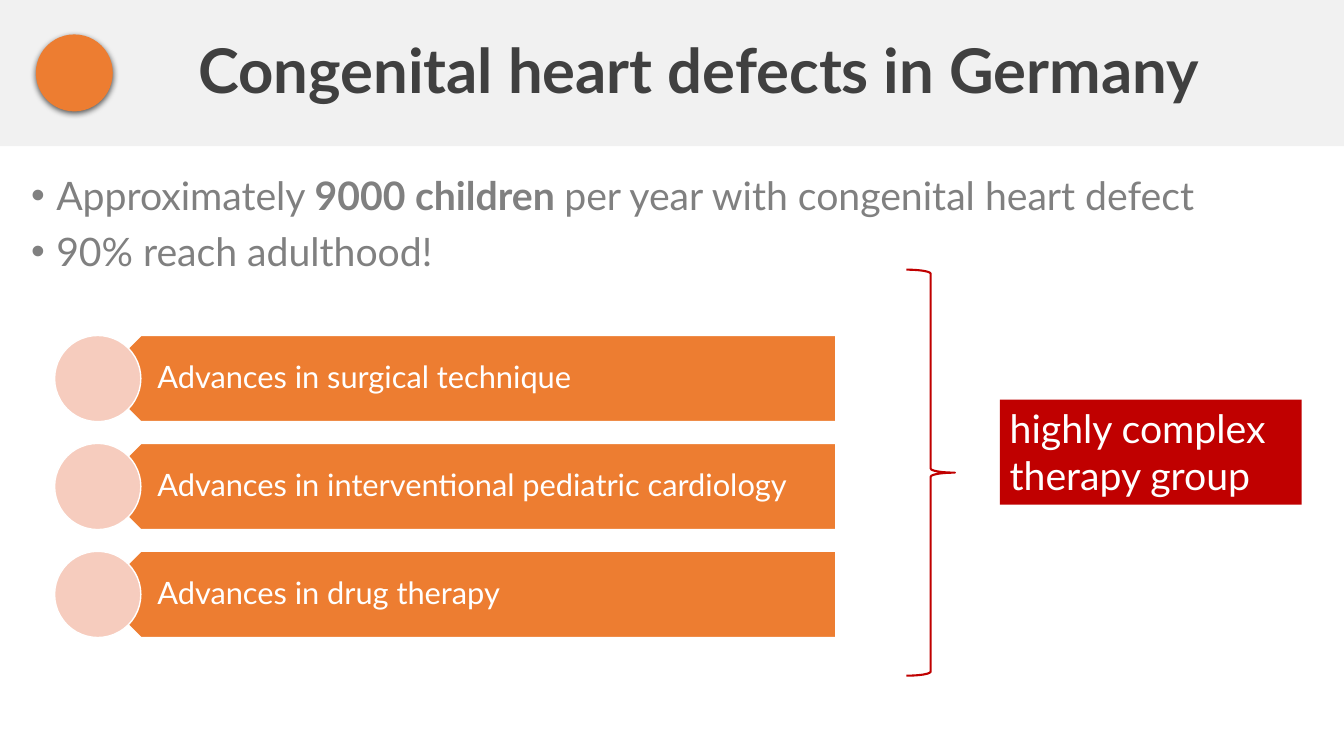
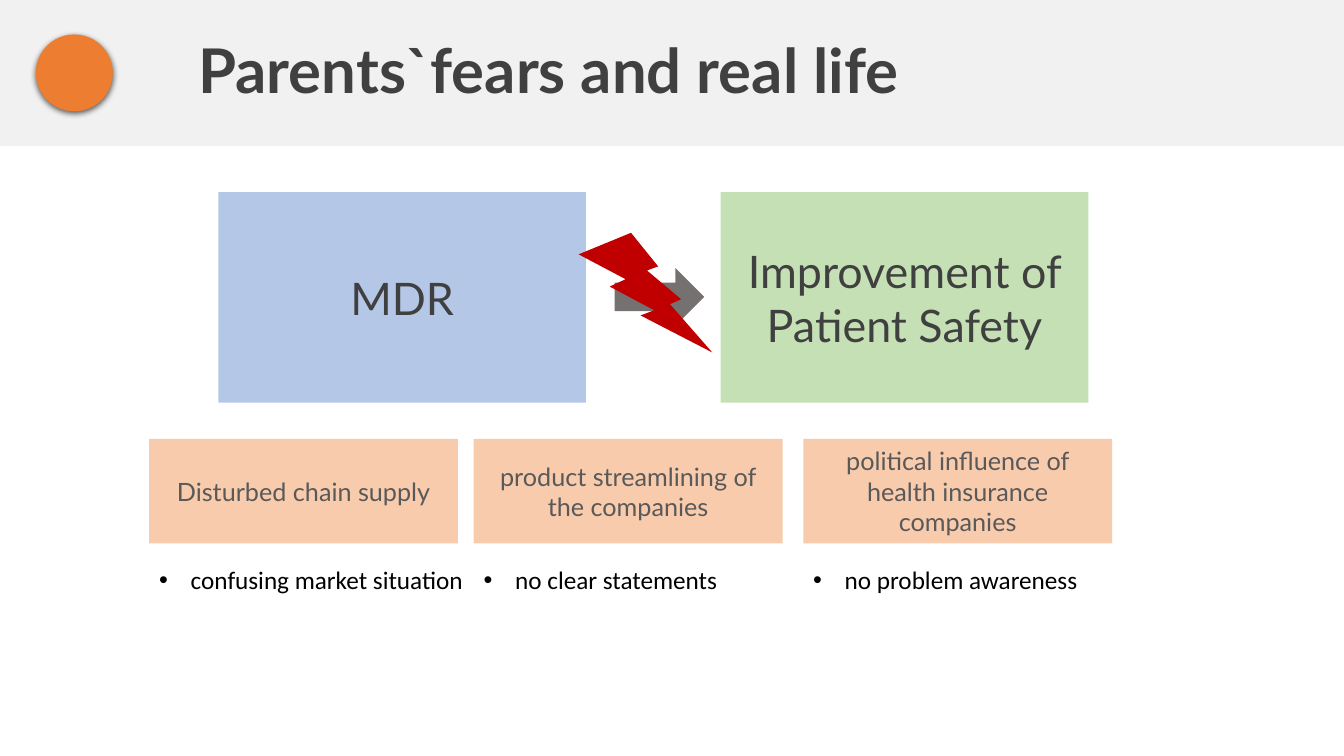
from typing import NamedTuple

from lxml.etree import SubElement
from pptx import Presentation
from pptx.dml.color import RGBColor
from pptx.enum.shapes import MSO_SHAPE as Preset
from pptx.enum.text import MSO_ANCHOR as Anchor, PP_ALIGN as Align
from pptx.oxml.ns import qn
from pptx.util import Pt

# Shared look
SLIDE_W, SLIDE_H = 960, 540
BAND_H = 104.4
FONT, NOTE_FONT = "Lato", "Calibri"
ORANGE, RED, WHITE = "ED7D31", "C00000", "FFFFFF"
BAND, DARK, GREY = "F1F1F1", "404040", "808080"
PINK, PEACH, BLUE, GREEN = "F6CCBE", "F8CBAD", "B4C7E7", "C5E0B4"
ARROW, CAUSE_TEXT, BLACK = "767171", "595959", "000000"


class Box(NamedTuple):
    left: float
    top: float
    width: float
    height: float


class Style(NamedTuple):
    size: float
    color: str
    font: str = FONT
    bold: bool = False
    align: Align = Align.LEFT
    anchor: Anchor = Anchor.MIDDLE
    line_spacing: float = 1.0
    space_before: float = 0
    bullet_indent: float = 0
    insets: tuple = (7.2, 3.6, 7.2, 3.6)


class Cause(NamedTuple):
    left: float
    label: str
    note: str


TITLE = Style(44, DARK, bold=True, line_spacing=0.9)
BODY = Style(28, GREY, anchor=Anchor.TOP, line_spacing=0.9,
             space_before=10, bullet_indent=18)
ADVANCE = Style(22, WHITE, line_spacing=0.9, insets=(27.4, 6.5, 12.2, 6.5))
RESULT = Style(28, WHITE, anchor=Anchor.TOP)
GOAL = Style(32, DARK, align=Align.CENTER)
CAUSE = Style(18, CAUSE_TEXT, align=Align.CENTER)
NOTE = Style(18, BLACK, NOTE_FONT, anchor=Anchor.TOP, bullet_indent=22.5)

# Slide content; a run is (text, bold)
FACTS = [
    [("Approximately ", False), ("9000 children ", True),
     ("per year with congenital heart defect", False)],
    [("90% reach adulthood!", False)],
]
ADVANCES = [
    "Advances in surgical technique",
    "Advances in interventional pediatric cardiology",
    "Advances in drug therapy",
]
GOALS = [(156, "MDR", BLUE), (514.8, "Improvement of Patient Safety", GREEN)]
CAUSES = [
    Cause(106.6, "Disturbed chain supply", "confusing market situation"),
    Cause(338.4, "product streamlining of the companies", "no clear statements"),
    Cause(573.8, "political influence of health insurance companies",
          "no problem awareness"),
]


def rgb(color: str) -> RGBColor:
    return RGBColor.from_string(color)


def set_all(target, values: dict) -> None:
    for name, value in values.items():
        setattr(target, name, value)


def add_bullet(paragraph, indent: float) -> None:
    props = paragraph._p.get_or_add_pPr()
    props.set("marL", str(Pt(indent)))
    props.set("indent", str(-Pt(indent)))
    SubElement(props, qn("a:buFont"), typeface="Arial")
    SubElement(props, qn("a:buChar"), char="•")


def write(shape, paragraphs: list, style: Style) -> None:
    frame = shape.text_frame
    left, top, right, bottom = map(Pt, style.insets)
    set_all(frame, {
        "word_wrap": True, "vertical_anchor": style.anchor,
        "margin_left": left, "margin_top": top,
        "margin_right": right, "margin_bottom": bottom,
    })
    for index, runs in enumerate(paragraphs):
        paragraph = frame.add_paragraph() if index else frame.paragraphs[0]
        set_all(paragraph, {
            "alignment": style.align, "line_spacing": style.line_spacing,
            "space_before": Pt(style.space_before),
        })
        if style.bullet_indent:
            add_bullet(paragraph, style.bullet_indent)
        for text, bold in runs:
            run = paragraph.add_run()
            run.text = text
            set_all(run.font, {"name": style.font, "size": Pt(style.size),
                               "bold": bold or style.bold})
            run.font.color.rgb = rgb(style.color)


def add_text(slide, box: Box, paragraphs: list, style: Style) -> None:
    write(slide.shapes.add_textbox(*map(Pt, box)), paragraphs, style)


def add_figure(slide, preset: Preset, box: Box, fill: str = "",
               line: str = "", line_width: float = 1):
    figure = slide.shapes.add_shape(preset, *map(Pt, box))
    figure.shadow.inherit = False
    if fill:
        figure.fill.solid()
        figure.fill.fore_color.rgb = rgb(fill)
    else:
        figure.fill.background()
    if line:
        figure.line.color.rgb = rgb(line)
        figure.line.width = Pt(line_width)
    else:
        figure.line.fill.background()
    return figure


def add_label_box(slide, box: Box, text: str, fill: str, style: Style) -> None:
    write(add_figure(slide, Preset.RECTANGLE, box, fill), [[(text, False)]], style)


def add_drop_shadow(figure) -> None:
    effects = figure._element.spPr.find(qn("a:effectLst"))
    shadow = SubElement(effects, qn("a:outerShdw"), blurRad=str(Pt(4.5)),
                        dist=str(Pt(1.5)), dir="5400000", rotWithShape="0")
    color = SubElement(shadow, qn("a:srgbClr"), val=BLACK)
    SubElement(color, qn("a:alpha"), val="63000")


def add_titled_slide(deck, title: str):
    slide = deck.slides.add_slide(deck.slide_layouts[6])
    add_figure(slide, Preset.RECTANGLE, Box(0, 0, SLIDE_W, BAND_H), BAND)
    dot = add_figure(slide, Preset.OVAL, Box(25.6, 24.6, 55, 55), ORANGE)
    add_drop_shadow(dot)
    add_text(slide, Box(134.6, 0, SLIDE_W - 134.6, BAND_H), [[(title, False)]], TITLE)
    return slide


def build_defects(deck) -> None:
    slide = add_titled_slide(deck, "Congenital heart defects in Germany")
    add_text(slide, Box(15.1, 122.4, 929.5, 80), FACTS, BODY)

    # Advances: left-pointing bar with a circle over its tip
    bar_h, pitch, right = 61.6, 77.1, 597
    for row, advance in enumerate(ADVANCES):
        top = 239.6 + row * pitch
        bar = add_figure(slide, Preset.PENTAGON,
                         Box(69.8, top, right - 69.8, bar_h), ORANGE, WHITE)
        bar.rotation = 180
        add_text(slide, Box(85, top, right - 85, bar_h), [[(advance, False)]], ADVANCE)
        add_figure(slide, Preset.OVAL, Box(69.8 - bar_h / 2, top, bar_h, bar_h),
                   PINK, WHITE)

    # Combined result
    add_label_box(slide, Box(714.2, 285.4, 215.6, 75.1),
                  "highly complex therapy group", RED, RESULT)
    add_figure(slide, Preset.RIGHT_BRACE, Box(647.5, 192.6, 34.6, 290),
               line=RED, line_width=1.5)


def build_fears(deck) -> None:
    slide = add_titled_slide(deck, "Parents`fears and real life")

    # Regulation and its goal, with the broken link between them
    for left, goal, fill in GOALS:
        add_label_box(slide, Box(left, 137.2, 262.6, 150.5), goal, fill, GOAL)
    add_figure(slide, Preset.RIGHT_ARROW, Box(439, 191.6, 64, 41), ARROW)
    add_figure(slide, Preset.LIGHTNING_BOLT, Box(413.3, 166.3, 95.5, 85.5), RED)

    # Causes and notes
    for cause in CAUSES:
        add_label_box(slide, Box(cause.left, 313.4, 220.6, 74.8),
                      cause.label, PEACH, CAUSE)
        add_text(slide, Box(cause.left, 399.8, 240, 29), [[(cause.note, False)]], NOTE)


def main() -> None:
    deck = Presentation()
    set_all(deck, {"slide_width": Pt(SLIDE_W), "slide_height": Pt(SLIDE_H)})
    build_defects(deck)
    build_fears(deck)
    deck.save("out.pptx")


if __name__ == "__main__":
    main()
